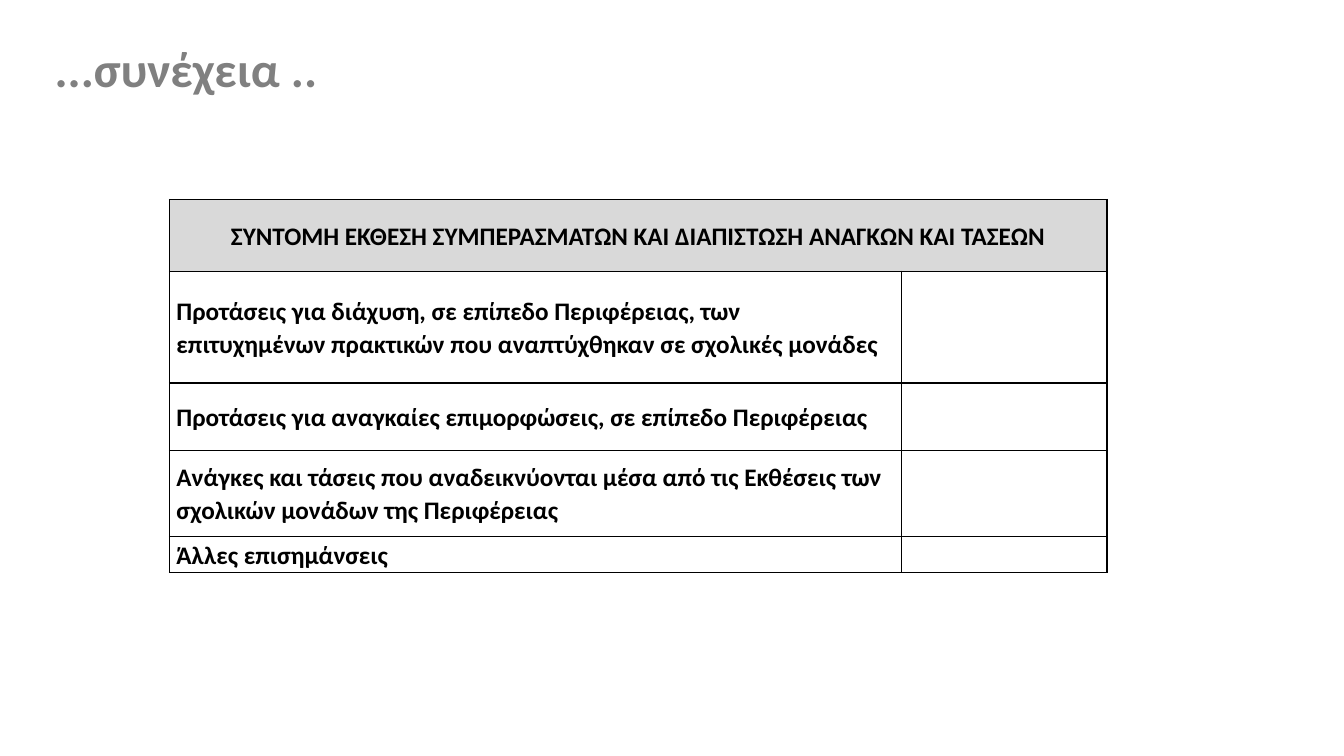
from lxml.etree import SubElement
from pptx import Presentation
from pptx.dml.color import RGBColor
from pptx.enum.text import MSO_ANCHOR, PP_ALIGN
from pptx.oxml import parse_xml
from pptx.oxml.ns import nsdecls, qn
from pptx.util import Inches, Pt

TITLE = "...συνέχεια .."
HEAD = "\u00a0ΣΥΝΤΟΜΗ ΕΚΘΕΣΗ ΣΥΜΠΕΡΑΣΜΑΤΩΝ ΚΑΙ ΔΙΑΠΙΣΤΩΣΗ ΑΝΑΓΚΩΝ ΚΑΙ ΤΑΣΕΩΝ "
ROWS = [
    (HEAD, 0.71),
    ("Προτάσεις για διάχυση, σε επίπεδο Περιφέρειας, των επιτυχημένων "
     "πρακτικών που αναπτύχθηκαν σε σχολικές μονάδες", 1.11),
    ("Προτάσεις για αναγκαίες επιμορφώσεις, σε επίπεδο Περιφέρειας", 0.67),
    ("Ανάγκες και τάσεις που αναδεικνύονται μέσα από τις Εκθέσεις των "
     "σχολικών μονάδων της Περιφέρειας", 0.85),
    ("Άλλες επισημάνσεις", 0.36),
]
COLS = [7.26, 2.04]
FONT = "Calibri"
BLACK = RGBColor(0x00, 0x00, 0x00)
GRAY = RGBColor(0x80, 0x80, 0x80)
PALE = RGBColor(0xD9, 0xD9, 0xD9)


def write(frame, text, size, color, align, space):
    para = frame.paragraphs[0]
    para.alignment = align
    para.line_spacing = space
    run = para.add_run()
    run.text = text
    font = run.font
    font.name, font.size, font.bold = FONT, Pt(size), True
    font.color.rgb = color


def border(cell):
    """Draw a thin black line on all four sides."""
    props = cell._tc.get_or_add_tcPr()
    for spot, side in enumerate("LRTB"):
        line = parse_xml(f'<a:ln{side} {nsdecls("a")} w="{Pt(1)}"/>')
        fill = SubElement(line, qn("a:solidFill"))
        SubElement(fill, qn("a:srgbClr"), val=str(BLACK))
        props.insert(spot, line)


def add_title(slide):
    title = slide.shapes.title
    title.left, title.top = Inches(0.35), Inches(0.14)
    title.width, title.height = Inches(2.99), Inches(1.15)
    title.text_frame.vertical_anchor = MSO_ANCHOR.MIDDLE
    write(title.text_frame, TITLE, 35, GRAY, PP_ALIGN.CENTER, 0.9)


def add_grid(slide):
    high = sum(height for _, height in ROWS)
    table = slide.shapes.add_table(
        len(ROWS), len(COLS), Inches(1.68), Inches(1.98),
        Inches(sum(COLS)), Inches(high)).table
    table.horz_banding = False
    for col, width in zip(table.columns, COLS):
        col.width = Inches(width)
    for r, (text, height) in enumerate(ROWS):
        table.rows[r].height = Inches(height)
        for cell in table.rows[r].cells:
            cell.margin_left = cell.margin_right = Inches(0.07)
            cell.margin_top = cell.margin_bottom = 0
            cell.vertical_anchor = MSO_ANCHOR.MIDDLE
            if r == 0:
                cell.fill.solid()
                cell.fill.fore_color.rgb = PALE
            else:
                cell.fill.background()
            border(cell)
        align = PP_ALIGN.LEFT if r else PP_ALIGN.CENTER
        write(table.cell(r, 0).text_frame, text, 18, BLACK, align, 1.07)
    table.cell(0, 0).merge(table.cell(0, 1))


def main():
    deck = Presentation()
    deck.slide_width, deck.slide_height = Inches(13.33), Inches(7.5)
    slide = deck.slides.add_slide(deck.slide_layouts[5])
    add_grid(slide)
    add_title(slide)
    deck.save("out.pptx")


if __name__ == "__main__":
    main()
